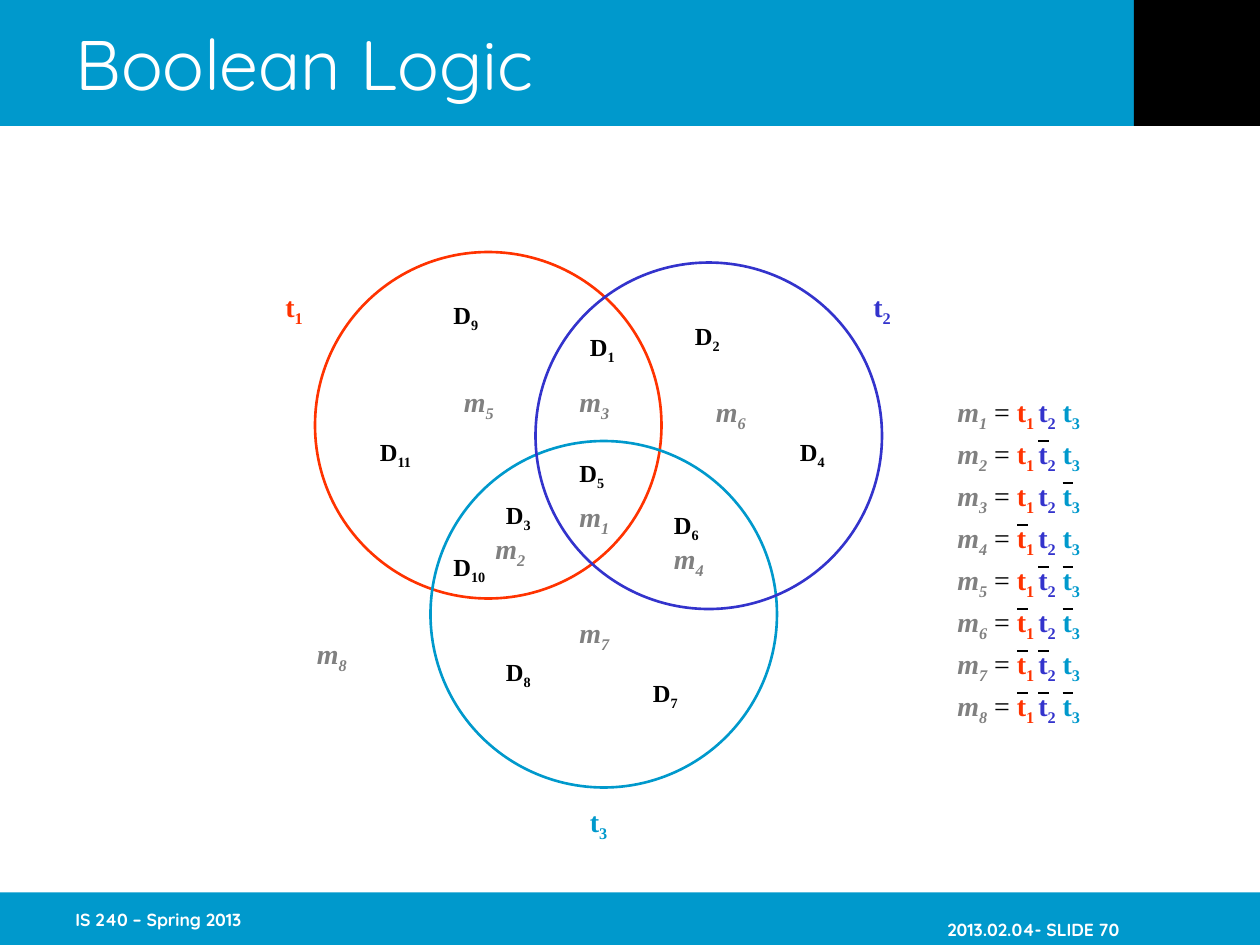
from pptx import Presentation
from pptx.dml.color import RGBColor
from pptx.enum.shapes import MSO_CONNECTOR, MSO_SHAPE
from pptx.enum.text import MSO_ANCHOR, PP_ALIGN
from pptx.oxml.ns import qn
from pptx.util import Pt
from lxml.etree import SubElement

PX = 7620
RED = RGBColor(0xFF, 0x33, 0x00)
INDIGO = RGBColor(0x33, 0x33, 0xCC)
TEAL = RGBColor(0x00, 0x99, 0xCC)
GRAY = RGBColor(0x80, 0x80, 0x80)
BLACK = RGBColor(0x00, 0x00, 0x00)
WHITE = RGBColor(0xFF, 0xFF, 0xFF)

SERIF = {"name": "Times New Roman", "size": Pt(16), "bold": True, "italic": False}
DOCUMENT = {**SERIF, "size": Pt(14)}
MINTERM = {**SERIF, "italic": True}
PLAIN = {**SERIF, "bold": False}
FOOTER = {"name": "Quicksand", "size": Pt(10), "bold": True}
TITLE = {"name": "Quicksand", "size": Pt(40), "bold": False}


def add_run(paragraph, text, color, formats, subscript=False):
    run = paragraph.add_run()
    run.text = text
    for name, value in formats.items():
        setattr(run.font, name, value)
    run.font.color.rgb = color
    if subscript:
        run.font._element.set("baseline", "-25000")


def add_text_box(left, top, width, height):
    box = slide.shapes.add_textbox(left * PX, top * PX, width * PX, height * PX)
    box.text_frame.word_wrap = True
    return box.text_frame


presentation = Presentation()
presentation.slide_width = 1200 * PX
presentation.slide_height = 900 * PX
slide = presentation.slides.add_slide(presentation.slide_layouts[5])

bands = [
    (0, 0, 1200, 120, TEAL),
    (0, 850, 1200, 50, TEAL),
    (1080, 0, 120, 120, BLACK),
]
for left, top, width, height, color in bands:
    band = slide.shapes.add_shape(
        MSO_SHAPE.RECTANGLE, left * PX, top * PX, width * PX, height * PX)
    band.shadow.inherit = False
    band.fill.solid()
    band.fill.fore_color.rgb = color
    band.line.fill.background()

title = slide.shapes.title
title.left, title.top, title.width, title.height = 60 * PX, 0, 1020 * PX, 120 * PX
title.text_frame.vertical_anchor = MSO_ANCHOR.MIDDLE
paragraph = title.text_frame.paragraphs[0]
paragraph.alignment = PP_ALIGN.LEFT
add_run(paragraph, "Boolean Logic", WHITE, TITLE)
slide.shapes._spTree.append(title._element)

footers = [
    (60, "IS 240 – Spring 2013", PP_ALIGN.LEFT, MSO_ANCHOR.MIDDLE),
    (816, "2013.02.04- SLIDE 70", PP_ALIGN.RIGHT, MSO_ANCHOR.BOTTOM),
]
for left, text, alignment, anchor in footers:
    frame = add_text_box(left, 850, 250, 50)
    frame.margin_right = 0
    frame.margin_bottom = 5 * PX
    frame.vertical_anchor = anchor
    paragraph = frame.paragraphs[0]
    paragraph.alignment = alignment
    add_run(paragraph, text, WHITE, FOOTER)

circles = [(300, 240, RED), (410, 420, TEAL), (510, 250, INDIGO)]
for left, top, color in circles:
    circle = slide.shapes.add_shape(
        MSO_SHAPE.OVAL, left * PX, top * PX, 330 * PX, 330 * PX)
    circle.shadow.inherit = False
    circle.fill.background()
    circle.line.color.rgb = color
    circle.line.width = Pt(1.5)

labels = [
    ("t", "3", 550, 760, TEAL, SERIF),
    ("t", "1", 260, 270, RED, SERIF),
    ("t", "2", 820, 270, INDIGO, SERIF),
    ("D", "1", 550, 310, BLACK, DOCUMENT),
    ("D", "2", 650, 300, BLACK, DOCUMENT),
    ("D", "3", 470, 470, BLACK, DOCUMENT),
    ("D", "4", 750, 410, BLACK, DOCUMENT),
    ("D", "5", 540, 430, BLACK, DOCUMENT),
    ("D", "6", 630, 480, BLACK, DOCUMENT),
    ("D", "8", 470, 620, BLACK, DOCUMENT),
    ("D", "7", 610, 640, BLACK, DOCUMENT),
    ("D", "9", 420, 280, BLACK, DOCUMENT),
    ("D", "10", 420, 520, BLACK, DOCUMENT),
    ("D", "11", 350, 410, BLACK, DOCUMENT),
    ("m", "1", 540, 470, GRAY, MINTERM),
    ("m", "2", 460, 500, GRAY, MINTERM),
    ("m", "3", 540, 360, GRAY, MINTERM),
    ("m", "5", 430, 360, GRAY, MINTERM),
    ("m", "4", 630, 510, GRAY, MINTERM),
    ("m", "7", 540, 580, GRAY, MINTERM),
    ("m", "8", 290, 600, GRAY, MINTERM),
    ("m", "6", 670, 370, GRAY, MINTERM),
]
for letter, index, left, top, color, formats in labels:
    height = 40 if formats is DOCUMENT else 44
    paragraph = add_text_box(left, top, 58, height).paragraphs[0]
    add_run(paragraph, letter, color, formats)
    add_run(paragraph, index, color, formats, subscript=True)

terms = [("t", "1 ", RED), ("t", "2", INDIGO), (" t", "3", TEAL)]
bar_lefts = {1: 969, 2: 989, 3: 1012}
negated_terms = [(), (2,), (3,), (1,), (2, 3), (1, 3), (1, 2), (1, 2, 3)]
for row, negated in enumerate(negated_terms):
    top = 370 + 40 * row
    paragraph = add_text_box(900, top, 180, 44).paragraphs[0]
    add_run(paragraph, "m", GRAY, MINTERM)
    add_run(paragraph, f"{row + 1}", GRAY, MINTERM, subscript=True)
    add_run(paragraph, " = ", BLACK, PLAIN)
    for letter, index, color in terms:
        add_run(paragraph, letter, color, SERIF)
        add_run(paragraph, index, color, SERIF, subscript=True)
    for term in negated:
        left, middle = bar_lefts[term], top + 10
        bar = slide.shapes.add_connector(
            MSO_CONNECTOR.STRAIGHT, left * PX, middle * PX, (left + 10) * PX, middle * PX)
        bar.line.color.rgb = BLACK
        bar.line.width = Pt(1.5)
        SubElement(bar._element.spPr, qn("a:effectLst"))

presentation.save("out.pptx")
